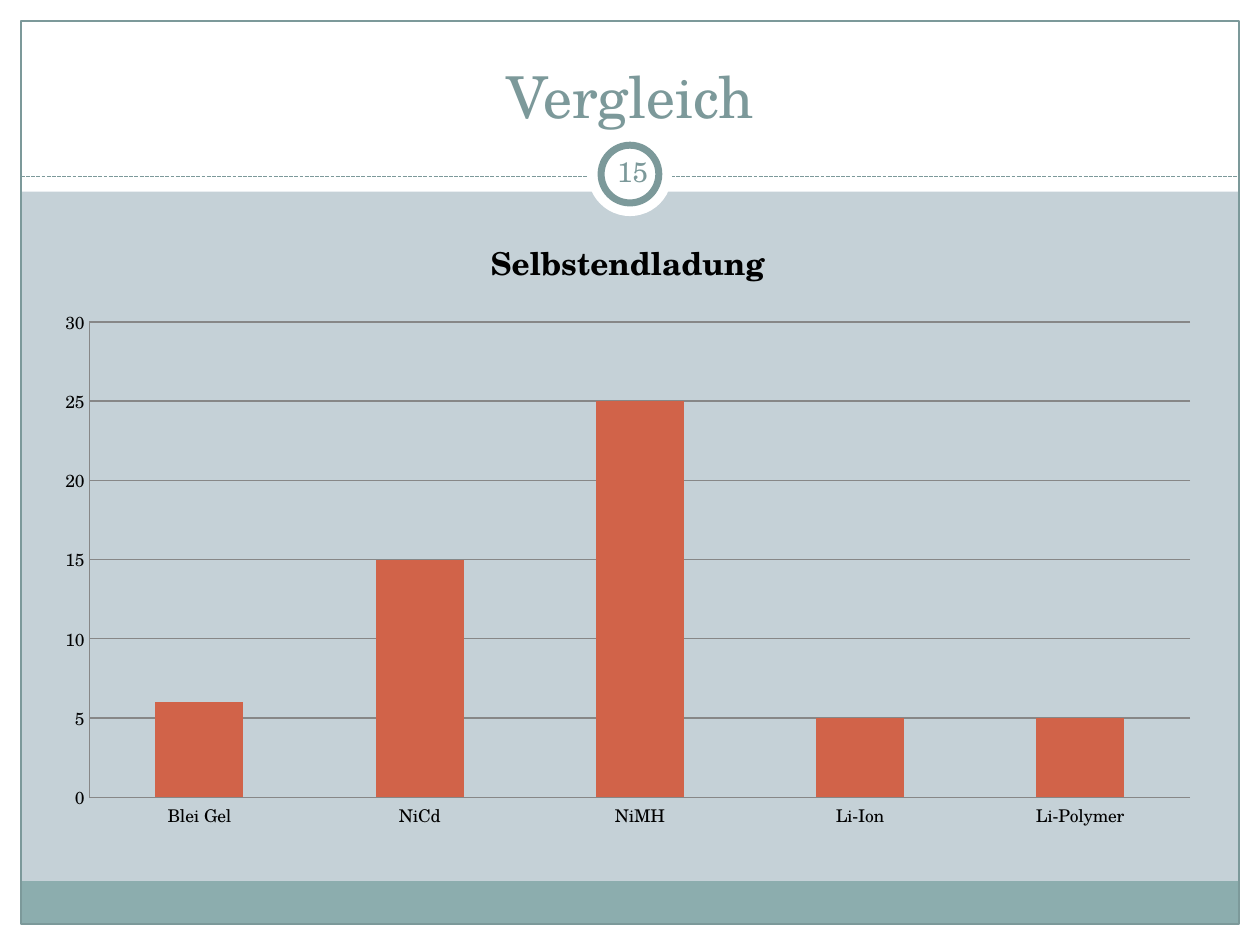
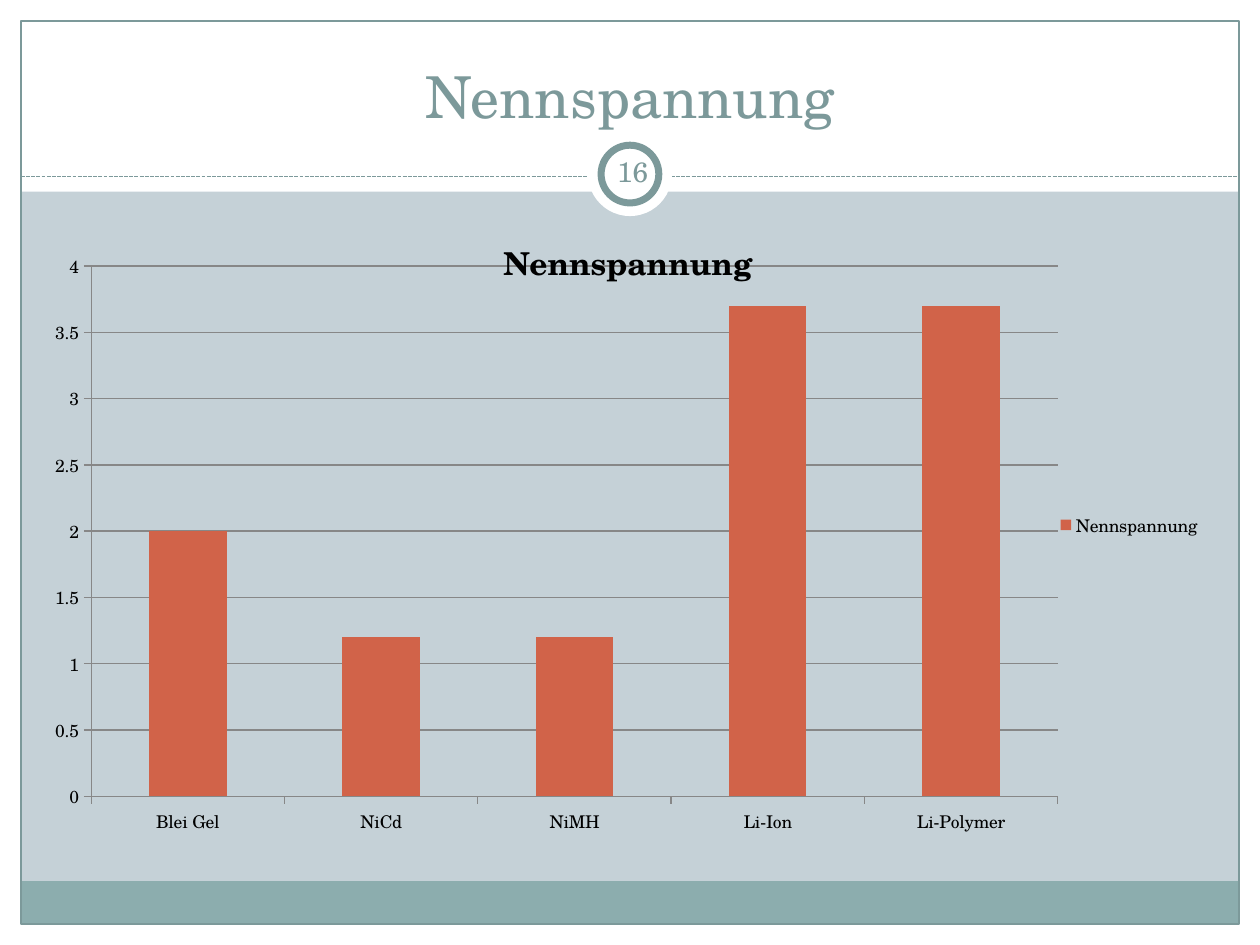
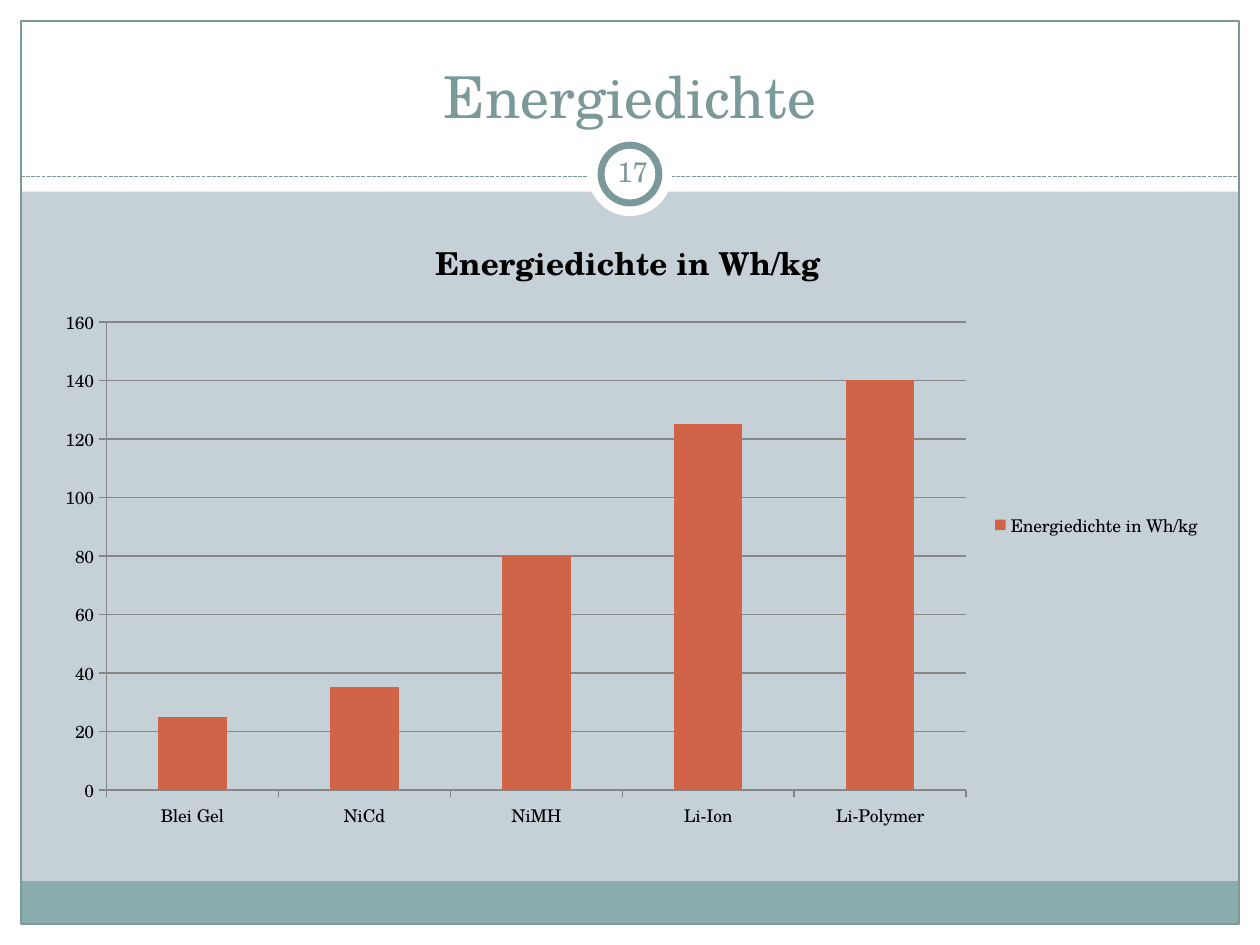
from lxml.etree import SubElement
from pptx import Presentation
from pptx.chart.data import CategoryChartData
from pptx.dml.color import RGBColor
from pptx.enum.chart import XL_CHART_TYPE, XL_LEGEND_POSITION, XL_TICK_MARK
from pptx.enum.dml import MSO_LINE
from pptx.enum.shapes import MSO_CONNECTOR, MSO_SHAPE
from pptx.enum.text import MSO_ANCHOR, PP_ALIGN
from pptx.oxml import parse_xml
from pptx.oxml.ns import nsdecls, qn
from pptx.util import Pt

FONT = "TeX Gyre Schola"
PALE = RGBColor(0xC5, 0xD1, 0xD7)
WHITE = RGBColor(0xFF, 0xFF, 0xFF)
BAND = RGBColor(0x8C, 0xAD, 0xAE)
TEAL = RGBColor(0x7C, 0x99, 0x9A)
RUST = RGBColor(0xD1, 0x63, 0x49)
GREY = RGBColor(0x87, 0x87, 0x87)
BLACK = RGBColor(0, 0, 0)

WIDE, HIGH, EDGE = 720, 540, 12
RULE = 101
MID = WIDE / 2
FIRST = 15
TYPES = ["Blei Gel", "NiCd", "NiMH", "Li-Ion", "Li-Polymer"]
PAGES = [
    dict(title="Vergleich", head="Selbstendladung", name="Series 1",
         vals=[6, 15, 25, 5, 5], legend=False, plot=None),
    dict(title="Nennspannung", head="Nennspannung", name="Nennspannung",
         vals=[2, 1.2, 1.2, 3.7, 3.7], legend=True,
         plot=dict(x=0.042, y=0.089, w=0.825, h=0.842)),
    dict(title="Energiedichte", head="Energiedichte in Wh/kg",
         name="Energiedichte in Wh/kg",
         vals=[25, 35, 80, 125, 140], legend=True, plot=None),
]


def disc(size):
    return MID - size / 2, 99.5 - size / 2, size, size


RECT, OVAL = MSO_SHAPE.RECTANGLE, MSO_SHAPE.OVAL
BANDS = [
    (RECT, (0, HIGH - EDGE, WIDE, EDGE), WHITE),
    (RECT, (0, 0, WIDE, 109.5), WHITE),
    (RECT, (0, 0, EDGE, HIGH), WHITE),
    (RECT, (WIDE - EDGE, 0, EDGE, HIGH), WHITE),
    (RECT, (EDGE, 503.5, WIDE - 2 * EDGE, 24.5), BAND),
]
FRAME = (EDGE, EDGE, WIDE - 2 * EDGE, HIGH - 2 * EDGE)


def points(box):
    return [Pt(n) for n in box]


def style(item, **values):
    for key, value in values.items():
        setattr(item, key, value)


def stroke(line, color, width=0.75):
    line.color.rgb = color
    line.width = Pt(width)


def form(slide, kind, box, fill=None, width=0):
    shape = slide.shapes.add_shape(kind, *points(box))
    shape.shadow.inherit = False
    if fill is None:
        shape.fill.background()
    else:
        shape.fill.solid()
        shape.fill.fore_color.rgb = fill
    if width:
        stroke(shape.line, TEAL, width)
    else:
        shape.line.fill.background()


def rule(slide):
    line = slide.shapes.add_connector(
        MSO_CONNECTOR.STRAIGHT, *points((EDGE, RULE, WIDE - EDGE, RULE)))
    stroke(line.line, TEAL)
    line.line.dash_style = MSO_LINE.SQUARE_DOT
    SubElement(line.element.spPr, qn("a:effectLst"))


def dress(slide, layout):
    layout.background.fill.solid()
    layout.background.fill.fore_color.rgb = PALE
    for spot in list(layout.placeholders):
        layout.shapes.element.remove(spot.element)
    for kind, box, fill in BANDS:
        form(slide, kind, box, fill)
    form(slide, RECT, FRAME, None, 0.75)
    rule(slide)
    form(slide, OVAL, disc(48), WHITE)
    form(slide, OVAL, disc(33), WHITE, 4)
    for shape in list(slide.shapes):
        layout.shapes.element.append(shape.element)


def label(slide, box, text, size, anchor, inset):
    frame = slide.shapes.add_textbox(*points(box)).text_frame
    style(frame, word_wrap=True, vertical_anchor=anchor,
          margin_left=Pt(inset), margin_right=Pt(inset),
          margin_top=Pt(3.6), margin_bottom=Pt(3.6))
    para = frame.paragraphs[0]
    para.alignment = PP_ALIGN.CENTER
    run = para.add_run()
    run.text = text
    style(run.font, name=FONT, size=Pt(size))
    run.font.color.rgb = TEAL


def place(chart, plot):
    area = chart.element.chart.plotArea
    for old in area.findall(qn("c:layout")):
        area.remove(old)
    parts = [("layoutTarget", "inner"), ("xMode", "edge"), ("yMode", "edge")]
    parts += plot.items()
    body = "".join(f'<c:{tag} val="{val}"/>' for tag, val in parts)
    area.insert(0, parse_xml(
        f'<c:layout {nsdecls("c")}><c:manualLayout>{body}'
        '</c:manualLayout></c:layout>'))


def graph(slide, page):
    data = CategoryChartData()
    data.categories = TYPES
    data.add_series(page["name"], page["vals"])
    chart = slide.shapes.add_chart(
        XL_CHART_TYPE.COLUMN_CLUSTERED, *points((24, 120, 669.5, 360)), data).chart
    style(chart.font, name=FONT, size=Pt(10))
    chart.font.color.rgb = BLACK
    chart.has_title = True
    head = chart.chart_title.text_frame
    head.text = page["head"]
    font = head.paragraphs[0].runs[0].font
    style(font, name=FONT, size=Pt(18), bold=True)
    font.color.rgb = BLACK
    chart.has_legend = page["legend"]
    if page["legend"]:
        style(chart.legend, position=XL_LEGEND_POSITION.RIGHT,
              include_in_layout=False)
    tick = XL_TICK_MARK.OUTSIDE if page["legend"] else XL_TICK_MARK.NONE
    for axis in (chart.category_axis, chart.value_axis):
        style(axis, major_tick_mark=tick, minor_tick_mark=XL_TICK_MARK.NONE)
        stroke(axis.format.line, GREY)
    chart.value_axis.has_major_gridlines = True
    stroke(chart.value_axis.major_gridlines.format.line, GREY)
    style(chart.plots[0], gap_width=150, vary_by_categories=False)
    fill = chart.plots[0].series[0].format.fill
    fill.solid()
    fill.fore_color.rgb = RUST
    if page["plot"]:
        place(chart, page["plot"])


def main():
    deck = Presentation()
    style(deck, slide_width=Pt(WIDE), slide_height=Pt(HIGH))
    blank = deck.slide_layouts[6]
    for num, page in enumerate(PAGES, FIRST):
        slide = deck.slides.add_slide(blank)
        if num == FIRST:
            dress(slide, blank)
        label(slide, (24, 18, 672, 60), page["title"], 33, MSO_ANCHOR.BOTTOM, 7.2)
        label(slide, (343.5, 80.5, 36, 34.5), str(num), 16, MSO_ANCHOR.MIDDLE, 3.6)
        graph(slide, page)
    deck.save("out.pptx")


if __name__ == "__main__":
    main()
